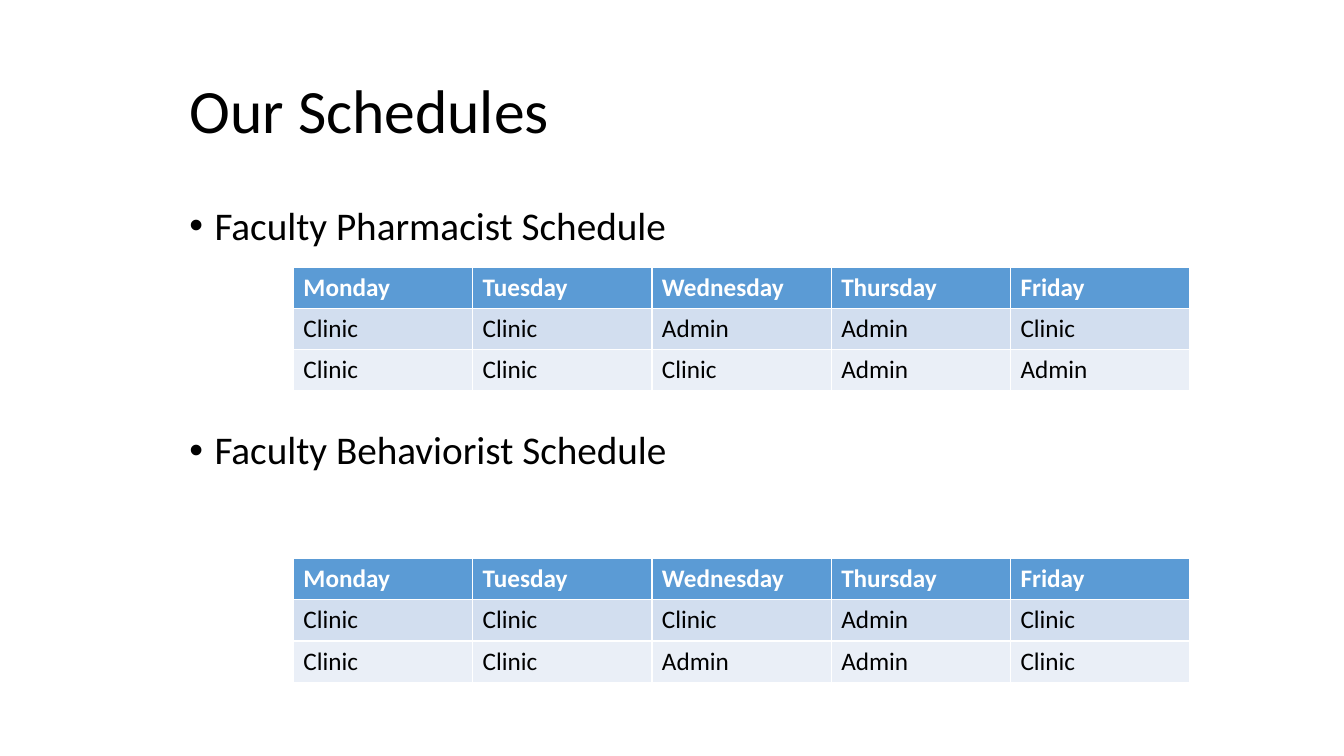
from lxml import etree
from pptx import Presentation
from pptx.dml.color import RGBColor
from pptx.enum.text import MSO_ANCHOR, PP_ALIGN
from pptx.oxml.ns import qn
from pptx.util import Inches, Pt

LEFT = PP_ALIGN.LEFT
MIDDLE = MSO_ANCHOR.MIDDLE
BLACK = RGBColor(0x00, 0x00, 0x00)
WHITE = RGBColor(0xFF, 0xFF, 0xFF)
HEADER_BLUE = RGBColor(0x5B, 0x9B, 0xD5)
BAND_FILLS = [RGBColor(0xD2, 0xDE, 0xEF), RGBColor(0xEA, 0xEF, 0xF7)]
FONT = "Calibri"

TITLE = "Our Schedules"
DAYS = ["Monday", "Tuesday", "Wednesday", "Thursday", "Friday"]
SCHEDULES = [
    ("Faculty Pharmacist Schedule", 2.65, [
        ["Clinic", "Clinic", "Admin", "Admin", "Clinic"],
        ["Clinic", "Clinic", "Clinic", "Admin", "Admin"],
    ]),
    ("Faculty Behaviorist Schedule", 5.54, [
        ["Clinic", "Clinic", "Clinic", "Admin", "Clinic"],
        ["Clinic", "Clinic", "Admin", "Admin", "Clinic"],
    ]),
]

PAGE_WIDTH, PAGE_HEIGHT = 13.33, 7.5
TEXT_LEFT, TEXT_WIDTH = 1.78, 11.14
TABLE_LEFT, TABLE_WIDTH, ROW_HEIGHT = 2.91, 8.89, 0.41
BULLET_INDENT = Inches(0.25)
HEADING_GAP = Pt(130)


def add_span(para, text, size, color, bold=False):
    span = para.add_run()
    span.text = text
    span.font.name = FONT
    span.font.size = Pt(size)
    span.font.bold = bold
    span.font.color.rgb = color


def add_bullet(para):
    properties = para._p.get_or_add_pPr()
    properties.set("marL", str(BULLET_INDENT))
    properties.set("indent", str(-BULLET_INDENT))
    etree.SubElement(properties, qn("a:buFont"), typeface="Arial")
    etree.SubElement(properties, qn("a:buChar"), char="•")


def place(shape, top, height):
    shape.left, shape.top = Inches(TEXT_LEFT), Inches(top)
    shape.width, shape.height = Inches(TEXT_WIDTH), Inches(height)


def add_title(page):
    title = page.shapes.title
    place(title, 0.4, 1.45)
    title.text_frame.vertical_anchor = MIDDLE
    para = title.text_frame.paragraphs[0]
    para.alignment = LEFT
    para.line_spacing = 0.9
    add_span(para, TITLE, 44, BLACK)


def add_headings(page):
    box = page.shapes.add_textbox(0, 0, 0, 0)
    place(box, 2, 4.76)
    frame = box.text_frame
    frame.word_wrap = True
    for index, (heading, _, _) in enumerate(SCHEDULES):
        para = frame.add_paragraph() if index else frame.paragraphs[0]
        para.line_spacing = 0.9
        if index:
            para.space_before = HEADING_GAP
        add_bullet(para)
        add_span(para, heading, 28, BLACK)


def add_schedule(page, top, weeks):
    rows = [DAYS] + weeks
    table = page.shapes.add_table(
        len(rows), len(DAYS), Inches(TABLE_LEFT), Inches(top),
        Inches(TABLE_WIDTH), Inches(ROW_HEIGHT * len(rows))).table
    for row_index, row in enumerate(rows):
        header = row_index == 0
        fill = HEADER_BLUE if header else BAND_FILLS[(row_index - 1) % 2]
        for column_index, text in enumerate(row):
            cell = table.cell(row_index, column_index)
            cell.fill.solid()
            cell.fill.fore_color.rgb = fill
            add_span(cell.text_frame.paragraphs[0], text, 18,
                     WHITE if header else BLACK, header)


def main():
    deck = Presentation()
    deck.slide_width, deck.slide_height = Inches(PAGE_WIDTH), Inches(PAGE_HEIGHT)
    page = deck.slides.add_slide(deck.slide_layouts[5])
    add_title(page)
    add_headings(page)
    for _, top, weeks in SCHEDULES:
        add_schedule(page, top, weeks)
    deck.save("out.pptx")


if __name__ == "__main__":
    main()
